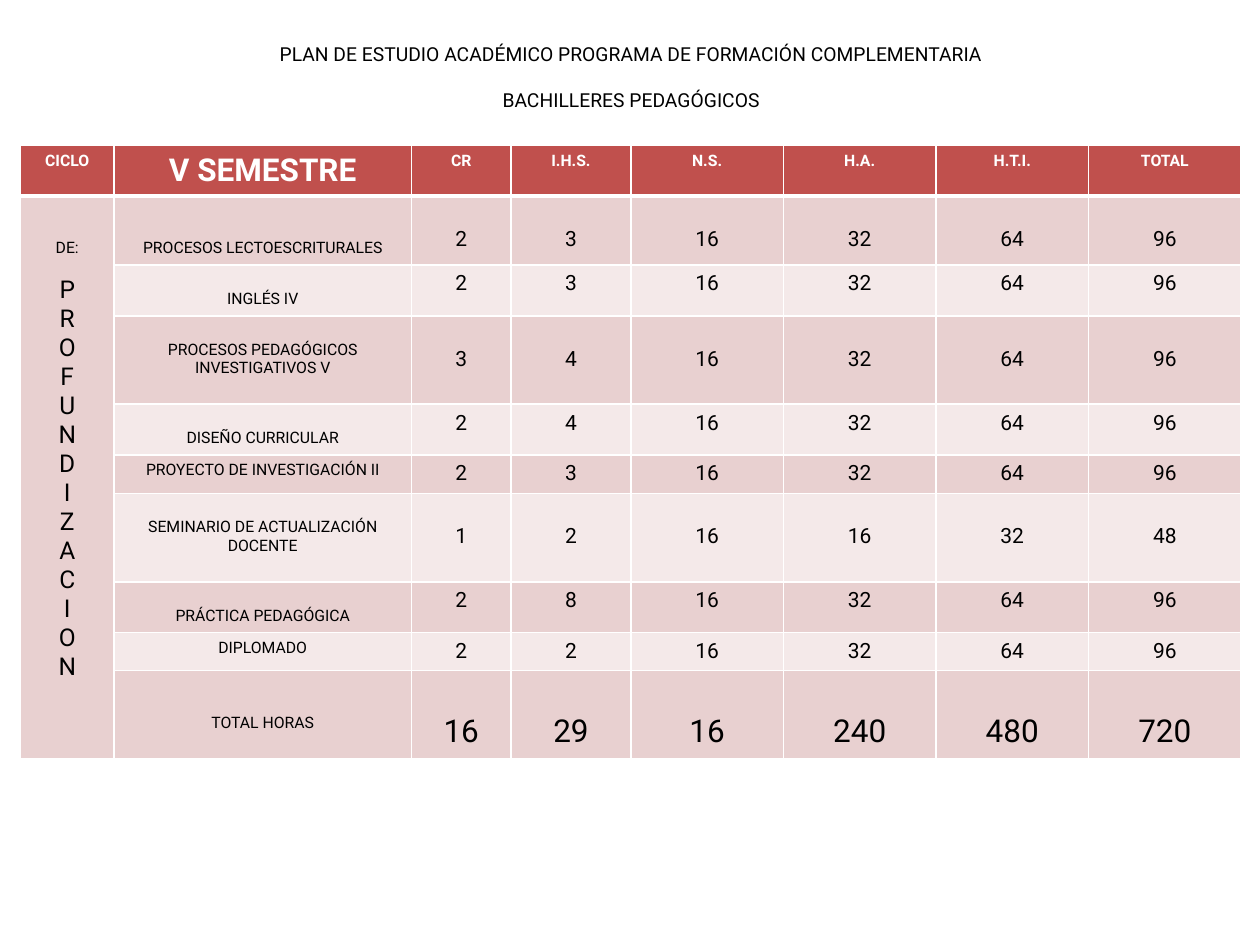
import lxml.etree
import pptx
import pptx.dml.color
import pptx.enum.text
import pptx.oxml.ns
import pptx.util

Pt = pptx.util.Pt
CENTER = pptx.enum.text.PP_ALIGN.CENTER
FONT = "Roboto"
LINE_HEIGHT = 1.17  # of the font size
CELL_MARGIN = 3.6
COLORS = {
    "text": "000000",
    "white": "FFFFFF",
    "header": "C0504D",
    "dark band": "E8D0D0",
    "light band": "F4E9E9",
}


def write_lines(frame, lines, size, color="text", bold=False):
    frame.word_wrap = True
    frame.text = "\n".join(lines)
    for para in frame.paragraphs:
        para.alignment = CENTER
        for span in para.runs:
            span.font.name = FONT
            span.font.size = Pt(size)
            span.font.bold = bold
            span.font.color.rgb = pptx.dml.color.RGBColor.from_string(COLORS[color])


def paint_cell(cell, color, top_width, bottom_width):
    """Give the cell white borders, then its fill."""
    properties = cell._tc.get_or_add_tcPr()
    for side, width in (("L", 1), ("R", 1), ("T", top_width), ("B", bottom_width)):
        line = lxml.etree.SubElement(
            properties, pptx.oxml.ns.qn("a:ln" + side), w=str(Pt(width)))
        fill = lxml.etree.SubElement(line, pptx.oxml.ns.qn("a:solidFill"))
        lxml.etree.SubElement(fill, pptx.oxml.ns.qn("a:srgbClr"), val=COLORS["white"])
    cell.fill.solid()
    cell.fill.fore_color.rgb = pptx.dml.color.RGBColor.from_string(COLORS[color])


deck = pptx.Presentation()
deck.slide_width, deck.slide_height = Pt(720), Pt(540)
page = deck.slides.add_slide(deck.slide_layouts[6])

# Title
title = page.shapes.add_textbox(Pt(139.7), Pt(20.9), Pt(442), Pt(47.5)).text_frame
write_lines(title, [
    "PLAN DE ESTUDIO ACADÉMICO PROGRAMA DE FORMACIÓN COMPLEMENTARIA",
    "BACHILLERES PEDAGÓGICOS",
], 11)
title.paragraphs[1].space_before = Pt(13)

# Study plan: label, row height, lines above label, lines above numbers,
# number size, numbers
headings = ["CICLO", "V SEMESTRE", "CR", "I.H.S.", "N.S.", "H.A.", "H.T.I.", "TOTAL"]
header_height = 28.5
courses = [
    ("PROCESOS LECTOESCRITURALES", 39.5, 2, 1, 12, [2, 3, 16, 32, 64, 96]),
    ("INGLÉS IV", 29, 1, 0, 12, [2, 3, 16, 32, 64, 96]),
    ("PROCESOS PEDAGÓGICOS INVESTIGATIVOS V", 50.5, 1, 1, 12, [3, 4, 16, 32, 64, 96]),
    ("DISEÑO CURRICULAR", 29, 1, 0, 12, [2, 4, 16, 32, 64, 96]),
    ("PROYECTO DE INVESTIGACIÓN II", 22, 0, 0, 12, [2, 3, 16, 32, 64, 96]),
    ("SEMINARIO DE ACTUALIZACIÓN DOCENTE", 50.5, 1, 1, 12, [1, 2, 16, 16, 32, 48]),
    ("PRÁCTICA PEDAGÓGICA", 29, 1, 0, 12, [2, 8, 16, 32, 64, 96]),
    ("DIPLOMADO", 21.5, 0, 0, 12, [2, 2, 16, 32, 64, 96]),
    ("TOTAL HORAS", 50.5, 2, 1, 18, [16, 29, 16, 240, 480, 720]),
]
widths = [53.3, 170, 57, 68.4] + [87.2] * 4
heights = [header_height] + [course[1] for course in courses]

table = page.shapes.add_table(
    len(heights), len(widths), Pt(11.8), Pt(83.2), Pt(sum(widths)), Pt(sum(heights))
).table
for column, width in zip(table.columns, widths):
    column.width = Pt(width)
for row, height in zip(table.rows, heights):
    row.height = Pt(height)

for column, heading in enumerate(headings):
    cell = table.cell(0, column)
    write_lines(cell.text_frame, [heading], 18 if column == 1 else 9, "white", True)
    paint_cell(cell, "header", 1, 3)

for row, (label, _, label_gap, number_gap, size, numbers) in enumerate(courses, 1):
    band = "dark band" if row % 2 else "light band"
    for column in range(len(widths)):
        cell = table.cell(row, column)
        paint_cell(cell, band if column else "dark band", 3 if row == 1 else 1, 1)
        if column == 1:
            write_lines(cell.text_frame, [label], 9)
            cell.margin_top = Pt(round(CELL_MARGIN + label_gap * 9 * LINE_HEIGHT, 2))
        elif column > 1:
            write_lines(cell.text_frame, [str(numbers[column - 2])], size)
            cell.margin_top = Pt(round(CELL_MARGIN + number_gap * size * LINE_HEIGHT, 2))

# Cycle name, one letter a line
cycle = table.cell(1, 0)
cycle.merge(table.cell(len(courses), 0))
cycle.margin_top = Pt(round(CELL_MARGIN + 2 * 9 * LINE_HEIGHT, 2))
write_lines(cycle.text_frame, ["DE:", *"PROFUNDIZACION"], 14)
cycle.text_frame.paragraphs[0].runs[0].font.size = Pt(9)
cycle.text_frame.paragraphs[1].space_before = Pt(10.5)

deck.save("out.pptx")
